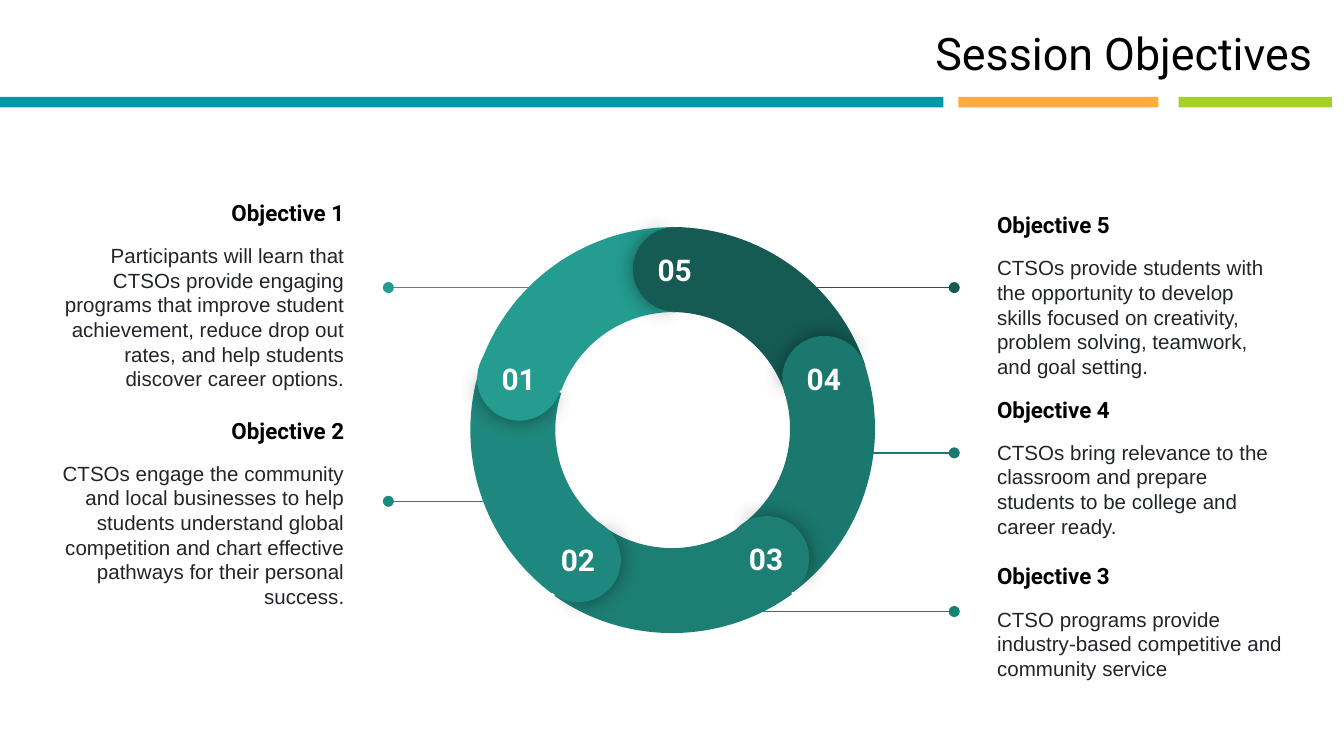
from dataclasses import dataclass

from lxml.etree import SubElement
from pptx import Presentation
from pptx.dml.color import RGBColor
from pptx.enum.shapes import MSO_CONNECTOR, MSO_SHAPE
from pptx.enum.text import MSO_ANCHOR, PP_ALIGN
from pptx.oxml.ns import qn
from pptx.util import Inches, Pt

BLACK = RGBColor(0x00, 0x00, 0x00)
WHITE = RGBColor(0xFF, 0xFF, 0xFF)
BODY_GREY = RGBColor(0x21, 0x25, 0x29)
BLUE = RGBColor(0x00, 0x97, 0xA7)
ORANGE = RGBColor(0xFF, 0xAB, 0x40)
LIME = RGBColor(0xA3, 0xD1, 0x27)

RING_SIZE = 3.04
KNOB_SIZE = 0.63
# Angles in degrees; each knob is two overlapping pies.
ARC_ANGLES = (210.04, 281.13)
SHADED_PIE_ANGLES = (103.17, 249.94)
PLAIN_PIE_ANGLES = (67.14, 286.4)
PLAIN_PIE_TURN = 179.3


@dataclass
class Objective:
    color: RGBColor
    arc: tuple  # left, top, rotation
    knob: tuple  # left, top, rotation
    leader: tuple  # start x, end x, y
    text_at: tuple  # left, top
    align: PP_ALIGN
    text: str


OBJECTIVES = {
    1: Objective(
        RGBColor(0x24, 0x9C, 0x90), (3.49, 1.69, 350), (3.55, 2.5, 284.1),
        (4.23, 2.89, 2.14), (0.34, 1.69), PP_ALIGN.RIGHT,
        "Participants will learn that CTSOs provide engaging programs that improve "
        "student achievement, reduce drop out rates, and help students discover "
        "career options."),
    2: Objective(
        RGBColor(0x1F, 0x88, 0x7E), (3.5, 1.68, 277), (3.99, 3.85, 211.1),
        (3.91, 2.89, 3.73), (0.34, 3.31), PP_ALIGN.RIGHT,
        "CTSOs engage the community and local businesses to help students "
        "understand global competition and chart effective pathways for their "
        "personal success."),
    3: Objective(
        RGBColor(0x1D, 0x7E, 0x74), (3.48, 1.67, 204), (5.39, 3.84, 139.1),
        (5.09, 7.1, 4.55), (7.32, 4.12), PP_ALIGN.LEFT,
        "CTSO programs provide industry-based competitive and community service"),
    4: Objective(
        RGBColor(0x1B, 0x78, 0x6E), (3.47, 1.67, 132), (5.82, 2.5, 67.1),
        (6.14, 7.1, 3.37), (7.32, 2.97), PP_ALIGN.LEFT,
        "CTSOs bring relevance to the classroom and prepare students to be college "
        "and career ready."),
    5: Objective(
        RGBColor(0x15, 0x5B, 0x54), (3.48, 1.69, 60), (4.71, 1.69, 357.1),
        (5.7, 7.1, 2.14), (7.32, 1.69), PP_ALIGN.LEFT,
        "CTSOs provide students with the opportunity to develop skills focused on "
        "creativity, problem solving, teamwork, and goal setting."),
}


class SlideBuilder:
    heading_font = "Roboto"
    body_font = "Arial"

    def __init__(self, slide):
        self.slide = slide

    def shape(self, kind, left, top, width, height, color, rotation=0):
        shape = self.slide.shapes.add_shape(
            kind, Inches(left), Inches(top), Inches(width), Inches(height))
        shape.shadow.inherit = False
        shape.fill.solid()
        shape.fill.fore_color.rgb = color
        shape.line.fill.background()
        shape.rotation = rotation % 360
        return shape

    def set_angles(self, shape, angles):
        """Set start and end angle; adjustments count 60000ths of a degree / 100000."""
        for index, angle in enumerate(angles):
            shape.adjustments[index] = angle * 0.6

    def arc(self, objective):
        left, top, rotation = objective.arc
        arc = self.shape(MSO_SHAPE.BLOCK_ARC, left, top, RING_SIZE, RING_SIZE,
                         objective.color, rotation)
        self.set_angles(arc, ARC_ANGLES)
        arc.adjustments[2] = 0.208

    def knob(self, objective):
        left, top, rotation = objective.knob
        for turn, angles in ((0, SHADED_PIE_ANGLES), (PLAIN_PIE_TURN, PLAIN_PIE_ANGLES)):
            pie = self.shape(MSO_SHAPE.PIE, left, top, KNOB_SIZE, KNOB_SIZE,
                             objective.color, rotation + turn)
            self.set_angles(pie, angles)
            if turn == 0:
                self.glow_shadow(pie)

    def glow_shadow(self, shape):
        effects = shape._element.spPr.find(qn("a:effectLst"))
        shadow = SubElement(effects, qn("a:outerShdw"), blurRad=str(Pt(11.2)),
                            dist="0", dir="0", algn="ctr", rotWithShape="0")
        color = SubElement(shadow, qn("a:srgbClr"), val="000000")
        SubElement(color, qn("a:alpha"), val="43000")

    def leader(self, objective):
        start, end, y = objective.leader
        line = self.slide.shapes.add_connector(
            MSO_CONNECTOR.STRAIGHT, Inches(start), Inches(y), Inches(end), Inches(y))
        line.line.color.rgb = objective.color
        line.line.width = Pt(0.75)
        SubElement(line.line._get_or_add_ln(), qn("a:tailEnd"), type="oval")
        SubElement(line._element.spPr, qn("a:effectLst"))

    def text(self, lines, left, top, width, height, align, anchor=MSO_ANCHOR.TOP):
        """Add a text box; each line is (text, font, size, color, bold)."""
        box = self.slide.shapes.add_textbox(
            Inches(left), Inches(top), Inches(width), Inches(height))
        frame = box.text_frame
        frame.word_wrap = True
        frame.vertical_anchor = anchor
        frame.margin_left = frame.margin_right = Inches(0.1)
        frame.margin_top = frame.margin_bottom = Inches(0.1)
        frame.text = "\n".join(line[0] for line in lines)
        for paragraph, (_, name, size, color, bold) in zip(frame.paragraphs, lines):
            paragraph.alignment = align
            font = paragraph.runs[0].font
            font.name, font.size, font.bold = name, Pt(size), bold
            font.color.rgb = color
        return frame

    def description(self, number, objective):
        frame = self.text(
            [(f"Objective {number}", self.heading_font, 12, BLACK, True),
             (objective.text, self.body_font, 11, BODY_GREY, False)],
            *objective.text_at, 2.32, 1.01, objective.align, MSO_ANCHOR.MIDDLE)
        frame.paragraphs[1].space_before = Pt(9.2)

    def number(self, number, objective):
        left, top, _ = objective.knob
        self.text([(f"{number:02}", self.heading_font, 16, WHITE, True)],
                  left + 0.03, top + 0.08, 0.56, 0.29, PP_ALIGN.CENTER)


def main():
    presentation = Presentation()
    presentation.slide_width = Inches(10)
    presentation.slide_height = presentation.slide_width * 9 // 16
    builder = SlideBuilder(presentation.slides.add_slide(presentation.slide_layouts[6]))

    for left, width, color in ((-0.01, 7.03, BLUE), (7.13, 1.49, ORANGE), (8.77, 1.14, LIME)):
        builder.shape(MSO_SHAPE.RECTANGLE, left, 0.72, width, 0.08, color)
    builder.text([("Session Objectives", builder.heading_font, 24, BLACK, False)],
                 2.56, 0.09, 7.3, 0.51, PP_ALIGN.RIGHT)

    for number, objective in OBJECTIVES.items():
        builder.leader(objective)
        builder.description(number, objective)

    # Stacking order makes each knob overlap the neighbouring arc.
    ring = ((builder.arc, (2, 4, 5)), (builder.knob, (4,)), (builder.arc, (3,)),
            (builder.knob, (2,)), (builder.arc, (1,)), (builder.knob, (5, 3, 1)))
    for draw, numbers in ring:
        for number in numbers:
            draw(OBJECTIVES[number])
    for number, objective in OBJECTIVES.items():
        builder.number(number, objective)

    presentation.save("out.pptx")


if __name__ == "__main__":
    main()
